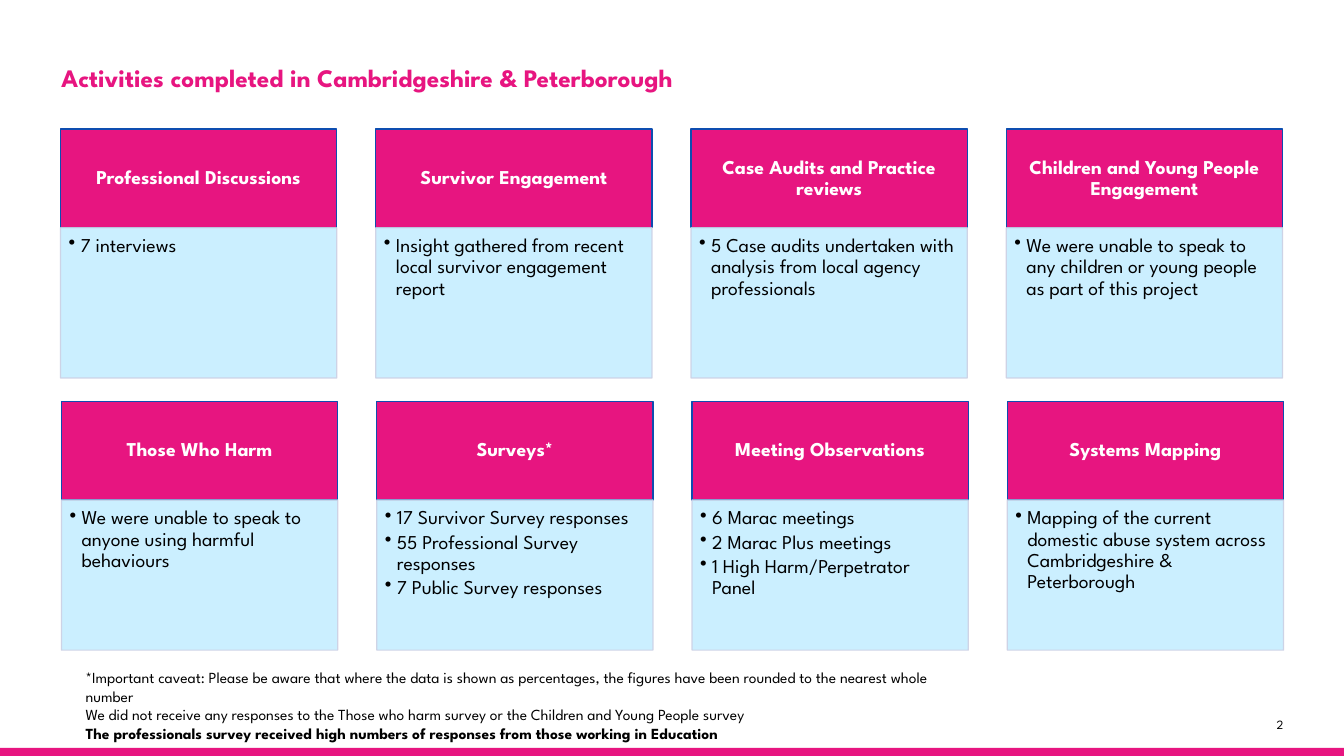
from lxml.etree import SubElement
from pptx import Presentation
from pptx.dml.color import RGBColor
from pptx.enum.shapes import MSO_SHAPE
from pptx.enum.text import MSO_ANCHOR, PP_ALIGN
from pptx.oxml.ns import qn
from pptx.util import Inches, Pt

FONT = "League Spartan"
PINK = RGBColor(0xE7, 0x15, 0x80)
PALE_BLUE = RGBColor(0xC6, 0xEE, 0xFF)
HEADING_EDGE = RGBColor(0x0E, 0x4D, 0xB0)
BODY_EDGE = RGBColor(0xCC, 0xD0, 0xE4)
BLACK = RGBColor(0, 0, 0)
WHITE = RGBColor(0xFF, 0xFF, 0xFF)

SLIDE_W, SLIDE_H = 13.33, 7.5
LEFT, COLUMN_PITCH, CARD_W = 0.6, 3.127, 2.74
HEADING_H, BODY_H = 0.98, 1.49
# Left edge and top of each row of cards
ROWS = [(LEFT, 1.28), (LEFT + 0.01, 3.98)]

ACTIVITIES = [
    [
        ("Professional Discussions", ["7\u00a0interviews"]),
        ("Survivor Engagement",
         ["Insight gathered from recent local survivor engagement report"]),
        ("Case Audits and Practice reviews",
         ["5 Case audits undertaken with analysis from local agency professionals"]),
        ("Children and Young People Engagement",
         ["We were unable to speak to any children or young people as part of this project"]),
    ],
    [
        ("Those Who Harm",
         ["We were unable to speak to anyone using harmful behaviours"]),
        ("Surveys*",
         ["17 Survivor Survey responses", "55 Professional Survey responses",
          "7 Public Survey responses"]),
        ("Meeting Observations",
         ["6 Marac meetings", "2 Marac Plus meetings", "1 High Harm/Perpetrator Panel"]),
        ("Systems Mapping",
         ["Mapping of the current domestic abuse system across Cambridgeshire & Peterborough"]),
    ],
]

CAVEATS = [
    ("*Important caveat: Please be aware that where the data is shown as percentages, "
     "the figures have been rounded to the nearest whole number", False),
    ("We did not receive any responses to the Those who harm survey "
     "or the Children and Young People survey", False),
    ("The professionals survey received high numbers of responses "
     "from those working in Education", True),
]

prs = Presentation()
prs.slide_width, prs.slide_height = Inches(SLIDE_W), Inches(SLIDE_H)
slide = prs.slides.add_slide(prs.slide_layouts[6])


def add_box(box, insets, anchor, fill=None, edge=None):
    """Add a filled rectangle, or a plain text box if no fill is given."""
    place = [Inches(length) for length in box]
    if fill is None:
        shape = slide.shapes.add_textbox(*place)
    else:
        shape = slide.shapes.add_shape(MSO_SHAPE.RECTANGLE, *place)
        shape.shadow.inherit = False
        shape.fill.solid()
        shape.fill.fore_color.rgb = fill
        if edge is None:
            shape.line.fill.background()
        else:
            shape.line.color.rgb = edge
            shape.line.width = Pt(0.85)
    frame = shape.text_frame
    frame.word_wrap = True
    frame.vertical_anchor = anchor
    (frame.margin_left, frame.margin_top,
     frame.margin_right, frame.margin_bottom) = [Inches(inset) for inset in insets]
    return shape


def write_line(frame, index, text, size, color, bold=False, align=PP_ALIGN.LEFT):
    """Write one paragraph; index 0 uses the frame's first paragraph."""
    paragraph = frame.add_paragraph() if index else frame.paragraphs[0]
    paragraph.alignment = align
    run = paragraph.add_run()
    run.text = text
    run.font.name, run.font.size, run.font.bold = FONT, Pt(size), bold
    run.font.color.rgb = color
    return paragraph


NO_INSETS = (0, 0, 0, 0)
add_box((0, SLIDE_H - 0.08, SLIDE_W, 0.08), NO_INSETS, MSO_ANCHOR.MIDDLE, PINK)

page_number = add_box((12.37, 7.11, 0.36, 0.15), NO_INSETS, MSO_ANCHOR.BOTTOM)
write_line(page_number.text_frame, 0, "2", 9, BLACK, align=PP_ALIGN.RIGHT)

title = add_box((0.61, 0.62, 12.12, 0.3), NO_INSETS, MSO_ANCHOR.BOTTOM)
write_line(title.text_frame, 0, "Activities completed in Cambridgeshire & Peterborough",
           18, PINK, bold=True)

for (row_left, top), activities in zip(ROWS, ACTIVITIES):
    for column, (activity, findings) in enumerate(activities):
        left = row_left + column * COLUMN_PITCH

        heading = add_box((left, top, CARD_W, HEADING_H), (0.11, 0.06, 0.11, 0.06),
                          MSO_ANCHOR.MIDDLE, PINK, HEADING_EDGE)
        name = write_line(heading.text_frame, 0, activity, 14, WHITE, True, PP_ALIGN.CENTER)
        name.line_spacing = 0.9

        body = add_box((left, top + HEADING_H, CARD_W, BODY_H), (0.08, 0.08, 0.11, 0.12),
                       MSO_ANCHOR.TOP, PALE_BLUE, BODY_EDGE)
        # Fill and edge are both 90% opaque
        for color in body._element.spPr.iter(qn("a:srgbClr")):
            SubElement(color, qn("a:alpha"), val="90000")
        for index, finding in enumerate(findings):
            item = write_line(body.text_frame, index, finding, 14, BLACK)
            item.line_spacing = 0.9
            item.space_after = Pt(2.1)
            properties = item._p.get_or_add_pPr()
            properties.set("marL", str(Inches(0.12)))
            properties.set("indent", str(-Inches(0.12)))
            SubElement(properties, qn("a:buChar"), char="•")

caveat_box = add_box((0.75, 6.58, 9.06, 1.03), (0.1, 0.05, 0.1, 0.05), MSO_ANCHOR.TOP)
for index, (caveat, bold) in enumerate(CAVEATS):
    write_line(caveat_box.text_frame, index, caveat, 11, BLACK, bold)

prs.save("out.pptx")
